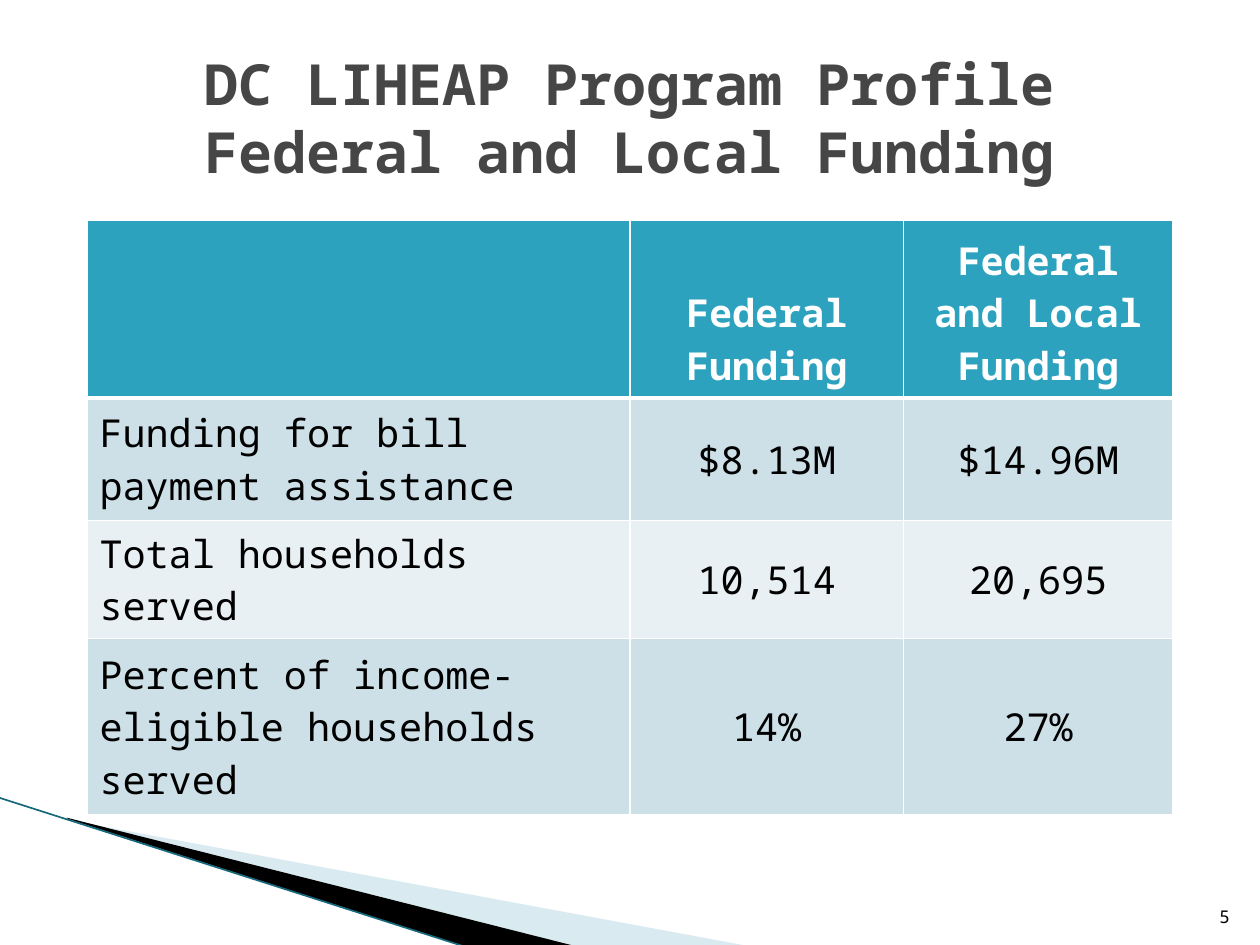
"""Build the program profile slide with its funding table."""
from lxml.etree import SubElement
from pptx import Presentation
from pptx.dml.color import RGBColor
from pptx.enum.shapes import MSO_CONNECTOR as Connector
from pptx.enum.text import MSO_ANCHOR as Anchor, PP_ALIGN as Align
from pptx.oxml import parse_xml
from pptx.oxml.ns import nsdecls, qn
from pptx.util import Inches, Pt

FONT = "Noto Sans Mono"
COLORS = {
    "title": "464646", "header": "2DA2BF", "odd": "CDE0E8", "even": "E8F0F4",
    "white": "FFFFFF", "black": "000000", "pale": "A0CBDC", "line": "16697C",
}
TITLE = "DC LIHEAP Program Profile\vFederal and Local Funding"
PAGE_NUMBER = "5"
ROWS = [
    ("", "Federal Funding", "Federal and Local Funding"),
    ("Funding for bill payment assistance", "$8.13M", "$14.96M"),
    ("Total households served", "10,514", "20,695"),
    ("Percent of income-eligible households served", "14%", "27%"),
]
COLUMN_WIDTHS = [4.31, 2.17, 2.14]
ROW_HEIGHTS = [1.41, 0.97, 0.94, 1.4]
WEDGES = [
    ("pale", 40, [(0.55, 6.51), (5.95, 7.51), (4.56, 7.51), (0.55, 6.5)]),
    ("black", 100, [(0.53, 6.49), (4.57, 7.51), (3.72, 7.52), (0.54, 6.5)]),
]
SWOOSH_LINE = (-0.01, 6.33, 3.71, 7.52)


def rgb(name):
    return RGBColor.from_string(COLORS[name])


def format_text(frame, align, anchor, color, size, bold=False):
    frame.word_wrap = True
    frame.vertical_anchor = anchor
    paragraph = frame.paragraphs[0]
    paragraph.alignment = align
    for name, value in {"name": FONT, "size": Pt(size), "bold": bold}.items():
        setattr(paragraph.font, name, value)
    paragraph.font.color.rgb = rgb(color)


def add_wedge(slide, color, opacity, points):
    start, *others = [(Inches(x), Inches(y)) for x, y in points]
    builder = slide.shapes.build_freeform(*start)
    builder.add_line_segments(others, close=True)
    shape = builder.convert_to_shape()
    shape.shadow.inherit = False
    shape.fill.solid()
    shape.fill.fore_color.rgb = rgb(color)
    shape.line.fill.background()
    if opacity < 100:
        fill_color = shape._element.spPr.find(".//" + qn("a:srgbClr"))
        SubElement(fill_color, qn("a:alpha"), val=str(opacity * 1000))


def add_swoosh_line(slide):
    line = slide.shapes.add_connector(Connector.STRAIGHT, *map(Inches, SWOOSH_LINE))
    line.line.color.rgb = rgb("line")
    line.line.width = Pt(0.95)
    SubElement(line._element.spPr, qn("a:effectLst"))


def set_borders(cell, widths):
    properties = cell._tc.get_or_add_tcPr()
    for index, (side, width) in enumerate(widths.items()):
        properties.insert(index, parse_xml(
            f'<a:ln{side} {nsdecls("a")} w="{Pt(width)}"><a:solidFill>'
            f'<a:srgbClr val="{COLORS["white"]}"/></a:solidFill></a:ln{side}>'))


def add_funding_table(slide):
    table = slide.shapes.add_table(
        len(ROWS), len(COLUMN_WIDTHS), Inches(0.69), Inches(1.75),
        Inches(sum(COLUMN_WIDTHS)), Inches(sum(ROW_HEIGHTS))).table
    for column, width in zip(table.columns, COLUMN_WIDTHS):
        column.width = Inches(width)
    for row_index, (values, height) in enumerate(zip(ROWS, ROW_HEIGHTS)):
        table.rows[row_index].height = Inches(height)
        header = row_index == 0
        fill = "header" if header else ("even", "odd")[row_index % 2]
        for column_index, value in enumerate(values):
            cell = table.cell(row_index, column_index)
            cell.text = value
            format_text(cell.text_frame, Align.CENTER if column_index else Align.LEFT,
                        None, "white" if header else "black", 22, header)
            cell.vertical_anchor = Anchor.BOTTOM if header else Anchor.MIDDLE
            cell.fill.solid()
            cell.fill.fore_color.rgb = rgb(fill)
            set_borders(cell, {"L": 1, "R": 1, "T": 3 if row_index == 1 else 1,
                               "B": 3 if header else 1})


def add_title(slide):
    title = slide.shapes.title
    bounds = {"left": 0.5, "top": 0.3, "width": 9, "height": 1.25}
    for name, value in bounds.items():
        setattr(title, name, Inches(value))
    title.text_frame.text = TITLE
    format_text(title.text_frame, Align.CENTER, Anchor.MIDDLE, "title", 32.4, True)
    title.text_frame.paragraphs[0].line_spacing = 1.0


def add_page_number(slide):
    box = slide.shapes.add_textbox(*map(Inches, (9.46, 7.01, 0.4, 0.4)))
    box.text_frame.text = PAGE_NUMBER
    format_text(box.text_frame, Align.RIGHT, Anchor.BOTTOM, "black", 10)


def main():
    presentation = Presentation()
    presentation.slide_width, presentation.slide_height = Inches(10), Inches(7.5)
    slide = presentation.slides.add_slide(presentation.slide_layouts[5])
    for wedge in WEDGES:
        add_wedge(slide, *wedge)
    add_swoosh_line(slide)
    add_title(slide)
    add_page_number(slide)
    add_funding_table(slide)
    presentation.save("out.pptx")


if __name__ == "__main__":
    main()
